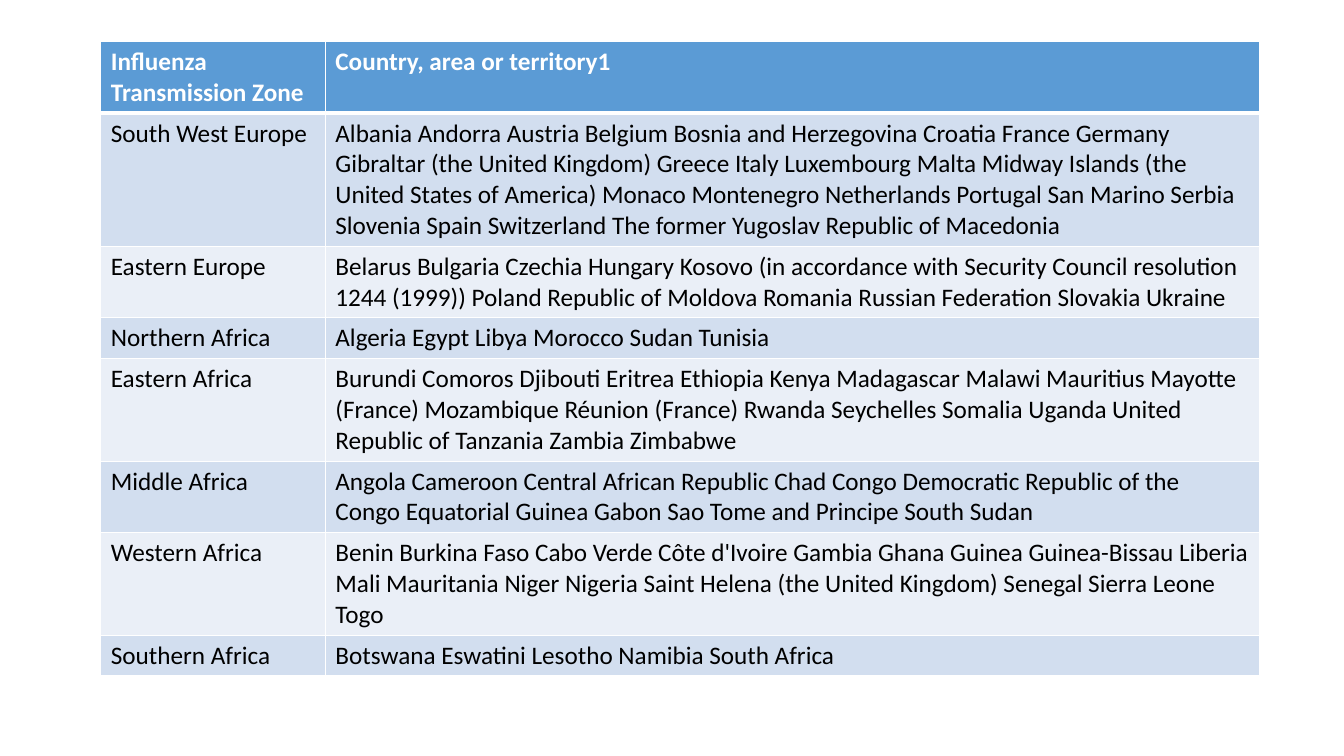
from dataclasses import dataclass

import lxml.etree
import pptx
import pptx.dml.color
import pptx.oxml.ns
import pptx.util

Pt = pptx.util.Pt

FONT_NAME = "Calibri"
FONT_SIZE = 18
WHITE = "FFFFFF"
BLACK = "000000"
HEADER_FILL = "5B9BD5"
BAND_FILLS = ("D2DEEF", "EAEFF7")

TABLE_LEFT, TABLE_TOP = 72, 29.6
COLUMN_WIDTHS = (160.4, 667.6)
ROW_HEIGHT = 29.2  # minimum height; rows grow with their text
THIN_BORDER, HEADER_BORDER = 1, 3


@dataclass
class Zone:
    name: str
    countries: str


HEADER = Zone("Influenza Transmission Zone", "Country, area or territory1")
ZONES = [
    Zone("South West Europe",
         "Albania Andorra Austria Belgium Bosnia and Herzegovina Croatia France Germany "
         "Gibraltar (the United Kingdom) Greece Italy Luxembourg Malta Midway Islands "
         "(the United States of America) Monaco Montenegro Netherlands Portugal San Marino "
         "Serbia Slovenia Spain Switzerland The former Yugoslav Republic of Macedonia"),
    Zone("Eastern Europe",
         "Belarus Bulgaria Czechia Hungary Kosovo (in accordance with Security Council "
         "resolution 1244 (1999)) Poland Republic of Moldova Romania Russian Federation "
         "Slovakia Ukraine"),
    Zone("Northern Africa", "Algeria Egypt Libya Morocco Sudan Tunisia"),
    Zone("Eastern Africa",
         "Burundi Comoros Djibouti Eritrea Ethiopia Kenya Madagascar Malawi Mauritius "
         "Mayotte (France) Mozambique Réunion (France) Rwanda Seychelles Somalia Uganda "
         "United Republic of Tanzania Zambia Zimbabwe"),
    Zone("Middle Africa",
         "Angola Cameroon Central African Republic Chad Congo Democratic Republic of the "
         "Congo Equatorial Guinea Gabon Sao Tome and Principe South Sudan"),
    Zone("Western Africa",
         "Benin Burkina Faso Cabo Verde Côte d'Ivoire Gambia Ghana Guinea Guinea-Bissau "
         "Liberia Mali Mauritania Niger Nigeria Saint Helena (the United Kingdom) Senegal "
         "Sierra Leone Togo"),
    Zone("Southern Africa", "Botswana Eswatini Lesotho Namibia South Africa"),
]


def color(hex_value: str) -> pptx.dml.color.RGBColor:
    return pptx.dml.color.RGBColor.from_string(hex_value)


def set_borders(cell, top: float, bottom: float) -> None:
    """Draw white lines on all four sides, with widths in points."""
    qn = pptx.oxml.ns.qn
    properties = cell._tc.get_or_add_tcPr()
    widths = {"a:lnL": THIN_BORDER, "a:lnR": THIN_BORDER, "a:lnT": top, "a:lnB": bottom}
    for tag, width in widths.items():
        line = lxml.etree.SubElement(properties, qn(tag), w=str(Pt(width)))
        fill = lxml.etree.SubElement(line, qn("a:solidFill"))
        lxml.etree.SubElement(fill, qn("a:srgbClr"), val=WHITE)


def fill_cell(cell, text: str, row_index: int) -> None:
    is_header = row_index == 0
    set_borders(cell,
                top=HEADER_BORDER if row_index == 1 else THIN_BORDER,
                bottom=HEADER_BORDER if is_header else THIN_BORDER)
    cell.fill.solid()
    cell.fill.fore_color.rgb = color(
        HEADER_FILL if is_header else BAND_FILLS[(row_index - 1) % 2])
    cell.text_frame.text = text
    font = cell.text_frame.paragraphs[0].runs[0].font
    font.name = FONT_NAME
    font.size = Pt(FONT_SIZE)
    font.bold = is_header
    font.color.rgb = color(WHITE if is_header else BLACK)


def add_zone_table(slide, zones: list[Zone]) -> None:
    table = slide.shapes.add_table(
        len(zones), len(COLUMN_WIDTHS), Pt(TABLE_LEFT), Pt(TABLE_TOP),
        Pt(sum(COLUMN_WIDTHS)), Pt(ROW_HEIGHT * len(zones))).table
    for column, width in zip(table.columns, COLUMN_WIDTHS):
        column.width = Pt(width)
    for row_index, zone in enumerate(zones):
        table.rows[row_index].height = Pt(ROW_HEIGHT)
        for column_index, text in enumerate((zone.name, zone.countries)):
            fill_cell(table.cell(row_index, column_index), text, row_index)


def main() -> None:
    # Widescreen presentation with one blank slide
    presentation = pptx.Presentation()
    presentation.slide_width, presentation.slide_height = Pt(960), Pt(540)
    slide = presentation.slides.add_slide(presentation.slide_layouts[6])

    # Header row followed by the transmission zones
    add_zone_table(slide, [HEADER, *ZONES])
    presentation.save("out.pptx")


if __name__ == "__main__":
    main()
